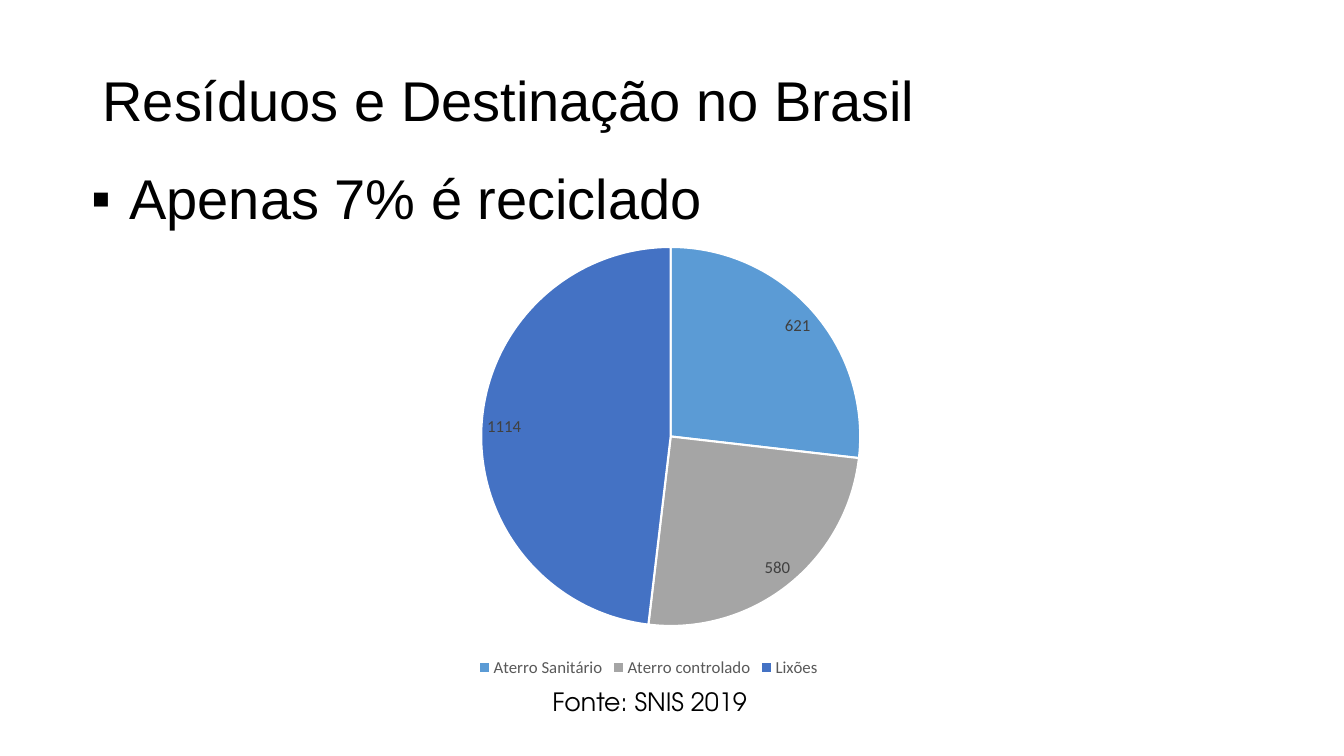
from lxml.etree import SubElement
from pptx import Presentation
from pptx.chart.data import CategoryChartData
from pptx.dml.color import RGBColor
from pptx.enum.chart import XL_CHART_TYPE, XL_LABEL_POSITION, XL_LEGEND_POSITION
from pptx.enum.text import MSO_ANCHOR, PP_ALIGN
from pptx.oxml import parse_xml
from pptx.oxml.ns import nsdecls, qn
from pptx.util import Pt

COLOURS = {
    "text": "000000",
    "label": "404040",
    "legend": "595959",
    "border": "FFFFFF",
}
DESTINATIONS = [
    ("Aterro Sanitário", 621, "5B9BD5"),
    ("Aterro controlado", 580, "A5A5A5"),
    ("Lixões", 1114, "4472C4"),
]
PLOT_AREA = {"x": 0.285, "y": 0.057, "w": 0.487, "h": 0.823}


def style_font(font, name, size, colour):
    font.name = name
    font.size = Pt(size)
    font.color.rgb = RGBColor.from_string(COLOURS[colour])


def add_text(page, box, text, anchor=MSO_ANCHOR.TOP):
    """Add a one-paragraph text box and return the paragraph."""
    frame = page.shapes.add_textbox(*map(Pt, box)).text_frame
    frame.word_wrap = True
    frame.vertical_anchor = anchor
    para = frame.paragraphs[0]
    para.text = text
    return para


def add_title(page, box):
    para = add_text(page, box, "Resíduos e Destinação no Brasil", MSO_ANCHOR.MIDDLE)
    para.line_spacing = 0.9
    style_font(para.font, "Arial", 40, "text")


def add_bullet(page, box):
    para = add_text(page, box, "Apenas 7% é reciclado")
    para.line_spacing = 0.9
    properties = para._p.get_or_add_pPr()
    properties.set("marL", str(Pt(27)))
    properties.set("indent", str(Pt(-27)))
    SubElement(properties, qn("a:buFont"), typeface="Arial")
    SubElement(properties, qn("a:buChar"), char="▪")
    style_font(para.font, "Arial", 40, "text")


def place_plot(chart):
    """Fix the inner plot area as fractions of the chart."""
    plot_area = chart._chartSpace.chart.plotArea
    for layout in plot_area.findall(qn("c:layout")):
        plot_area.remove(layout)
    modes = '<c:xMode val="edge"/><c:yMode val="edge"/>'
    sizes = "".join(f'<c:{key} val="{value}"/>' for key, value in PLOT_AREA.items())
    plot_area.insert(0, parse_xml(
        f'<c:layout {nsdecls("c")}><c:manualLayout><c:layoutTarget val="inner"/>'
        f"{modes}{sizes}</c:manualLayout></c:layout>"))


def add_destination_pie(page, box):
    names, values, fills = zip(*DESTINATIONS)
    data = CategoryChartData()
    data.categories = names
    data.add_series("Destinação", values)
    chart = page.shapes.add_chart(XL_CHART_TYPE.PIE, *map(Pt, box), data).chart
    chart.has_title = False
    style_font(chart.font, "Calibri", 10, "text")
    place_plot(chart)

    # Legend
    chart.has_legend = True
    chart.legend.position = XL_LEGEND_POSITION.BOTTOM
    chart.legend.include_in_layout = False
    style_font(chart.legend.font, "Calibri", 12, "legend")

    # Slices
    plot = chart.plots[0]
    plot.vary_by_categories = True
    series = plot.series[0]
    for index, fill in enumerate(fills):
        slice_format = series.points[index].format
        slice_format.fill.solid()
        slice_format.fill.fore_color.rgb = RGBColor.from_string(fill)
        slice_format.line.color.rgb = RGBColor.from_string(COLOURS["border"])
        slice_format.line.width = Pt(1.5)

    # Value labels
    labels = series.data_labels
    labels.show_value = True
    labels.position = XL_LABEL_POSITION.BEST_FIT
    style_font(labels.font, "Calibri", 12, "label")


def add_source(page, box):
    para = add_text(page, box, "Fonte: SNIS 2019")
    para.alignment = PP_ALIGN.CENTER
    style_font(para.font, "TeX Gyre Adventor", 18, "text")


def main():
    deck = Presentation()
    deck.slide_width, deck.slide_height = Pt(960), Pt(540)
    page = deck.slides.add_slide(deck.slide_layouts[6])
    add_bullet(page, (58.3, 118.8, 810.7, 311))
    add_title(page, (66.2, 28.8, 828, 90))
    add_destination_pie(page, (185, 157.7, 556.6, 329))
    add_source(page, (383, 486.7, 162, 28.8))
    deck.save("out.pptx")


if __name__ == "__main__":
    main()
